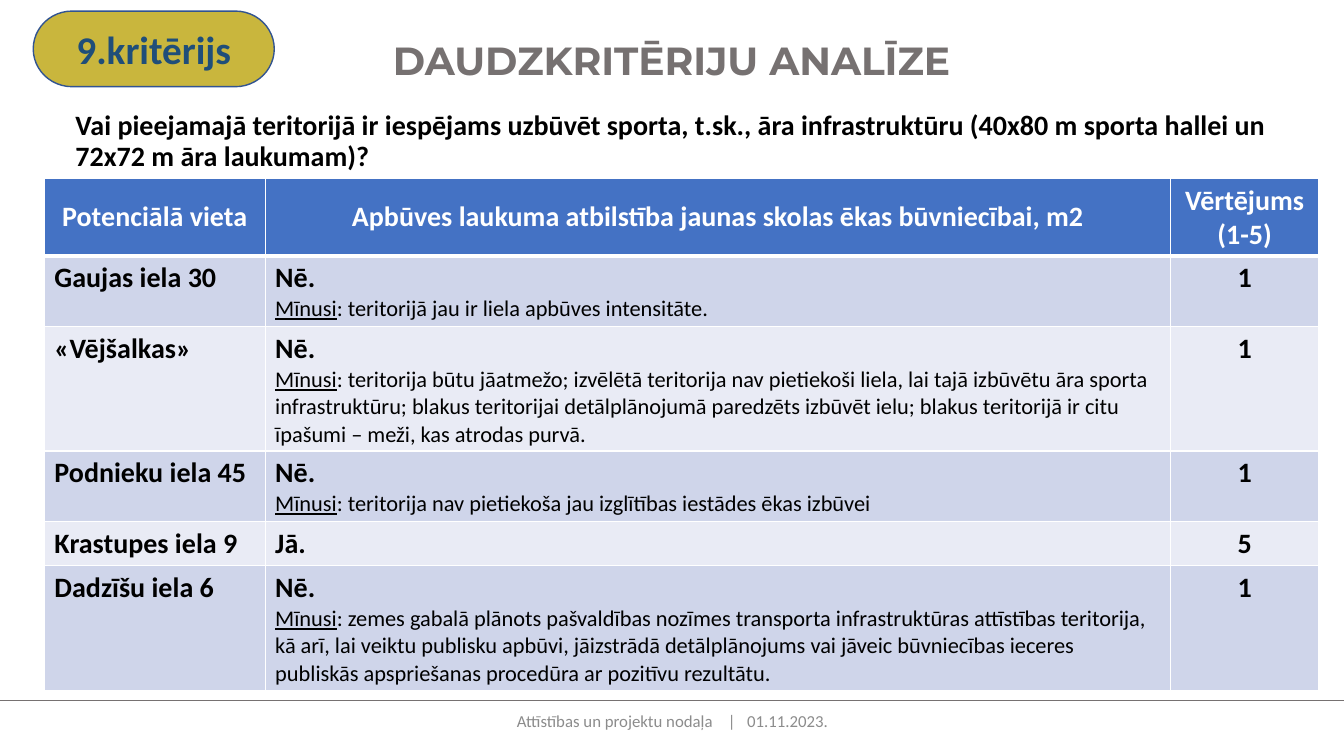
"""Build the slide that scores five sites on criterion 9."""
from dataclasses import dataclass

from lxml import etree
from pptx import Presentation
from pptx import util as u
from pptx.dml import color
from pptx.enum import shapes, text
from pptx.oxml import ns

COLORS = {
    "white": "FFFFFF", "black": "000000", "grey": "767171", "footer": "8C8C8C",
    "header": "4472C4", "band_dark": "CFD5EA", "band_light": "E9EBF5",
    "badge": "C9B63D", "badge_line": "325491", "badge_text": "1F4E79",
}
CENTER = text.PP_ALIGN.CENTER
MIDDLE = text.MSO_ANCHOR.MIDDLE


@dataclass(frozen=True)
class Site:
    """One assessed site; the height is in inches."""
    name: str
    answer: str
    drawback: str
    score: str
    height: float


HEADINGS = ("Potenciālā vieta",
            "Apbūves laukuma atbilstība jaunas skolas ēkas būvniecībai, m2",
            "Vērtējums (1-5)")
COLUMN_WIDTHS = (2.19, 8.98, 1.47)
HEADER_HEIGHT = 0.77
SITES = (
    Site("Gaujas iela 30", "Nē", "teritorijā jau ir liela apbūves intensitāte.", "1", 0.7),
    Site("«Vējšalkas»", "Nē",
         "teritorija būtu jāatmežo; izvēlētā teritorija nav pietiekoši liela, lai tajā "
         "izbūvētu āra sporta infrastruktūru; blakus teritorijai detālplānojumā paredzēts "
         "izbūvēt ielu; blakus teritorijā ir citu īpašumi – meži, kas atrodas purvā.", "1", 1.23),
    Site("Podnieku iela 45", "Nē",
         "teritorija nav pietiekoša jau izglītības iestādes ēkas izbūvei", "1", 0.7),
    Site("Krastupes iela 9", "Jā", "", "5", 0.44),
    Site("Dadzīšu iela 6", "Nē",
         "zemes gabalā plānots pašvaldības nozīmes transporta infrastruktūras attīstības "
         "teritorija, kā arī, lai veiktu publisku apbūvi, jāizstrādā detālplānojums vai "
         "jāveic būvniecības ieceres publiskās apspriešanas procedūra ar pozitīvu rezultātu.",
         "1", 1.23),
)


def rgb(name: str) -> color.RGBColor:
    """Return the named colour."""
    return color.RGBColor.from_string(COLORS[name])


def add_span(para, words: str, *, size: float = 20, ink: str = "black", bold: bool = True,
             underline: bool = False, font: str = "Calibri", spacing: float = 0) -> None:
    """Append formatted text to a paragraph; spacing is in points."""
    span = para.add_run()
    span.text = words
    span.font.size = u.Pt(size)
    span.font.name = font
    span.font.bold = bold
    span.font.underline = underline
    span.font.color.rgb = rgb(ink)
    if spacing:
        span.font._element.set("spc", str(round(spacing * 100)))


def add_text_box(page, left: float, top: float, width: float, height: float):
    """Add a wrapping text box and return its text frame."""
    frame = page.shapes.add_textbox(*map(u.Inches, (left, top, width, height))).text_frame
    frame.word_wrap = True
    return frame


def set_borders(cell, top: float, bottom: float) -> None:
    """Give a cell white borders, with widths in points."""
    properties = cell._tc.get_or_add_tcPr()
    for side, width in (("L", 1), ("R", 1), ("T", top), ("B", bottom)):
        line = etree.SubElement(properties, ns.qn(f"a:ln{side}"), w=str(u.Pt(width)))
        fill = etree.SubElement(line, ns.qn("a:solidFill"))
        etree.SubElement(fill, ns.qn("a:srgbClr"), val=COLORS["white"])


def style_cell(cell, fill: str, top: float = 1, bottom: float = 1) -> None:
    """Set the borders and the fill of a cell."""
    set_borders(cell, top, bottom)
    cell.fill.solid()
    cell.fill.fore_color.rgb = rgb(fill)


def add_site(cells, site: Site) -> None:
    """Write one site into the cells of its row."""
    name, verdict, score = (cell.text_frame for cell in cells)
    add_span(name.paragraphs[0], site.name)
    add_span(verdict.paragraphs[0], f"{site.answer}.")
    if site.drawback:
        para = verdict.add_paragraph()
        add_span(para, "Mīnusi", size=16, bold=False, underline=True)
        add_span(para, f": {site.drawback}", size=16, bold=False)
    score.paragraphs[0].alignment = CENTER
    add_span(score.paragraphs[0], site.score)


def add_score_table(page) -> None:
    """Add the table of sites."""
    heights = (HEADER_HEIGHT, *(site.height for site in SITES))
    table = page.shapes.add_table(
        len(heights), len(HEADINGS), u.Inches(0.44), u.Inches(1.77),
        u.Inches(sum(COLUMN_WIDTHS)), u.Inches(sum(heights))).table
    for column, width in zip(table.columns, COLUMN_WIDTHS):
        column.width = u.Inches(width)
    for row, height in zip(table.rows, heights):
        row.height = u.Inches(height)
    for cell, heading in zip(table.rows[0].cells, HEADINGS):
        style_cell(cell, "header", bottom=3)
        cell.vertical_anchor = MIDDLE
        para = cell.text_frame.paragraphs[0]
        para.alignment = CENTER
        add_span(para, heading, ink="white")
    for index, site in enumerate(SITES):
        cells = list(table.rows[index + 1].cells)
        for cell in cells:
            style_cell(cell, "band_light" if index % 2 else "band_dark",
                       top=1 if index else 3)
        add_site(cells, site)


def add_footer(page) -> None:
    """Add the footer text and the rule above it."""
    frame = add_text_box(page, 4.42, 6.95, 4.5, 0.4)
    frame.vertical_anchor = MIDDLE
    para = frame.paragraphs[0]
    para.alignment = CENTER
    for words, spacing in (("Attīstības un projektu nodaļa", 0), (" ", 8), ("|", 0),
                           (" ", 5.5), ("01.11.2023.", 0)):
        add_span(para, words, size=12, ink="footer", bold=False, spacing=spacing)
    rule = page.shapes.add_connector(shapes.MSO_CONNECTOR.STRAIGHT, u.Inches(0),
                                     u.Inches(6.95), u.Inches(13.33), u.Inches(6.95))
    rule.line.color.rgb = rgb("grey")
    rule.line.width = u.Pt(0.5)
    etree.SubElement(rule._element.spPr, ns.qn("a:effectLst"))


def add_badge(page) -> None:
    """Add the criterion badge."""
    badge = page.shapes.add_shape(shapes.MSO_SHAPE.FLOWCHART_TERMINATOR,
                                  *map(u.Inches, (0.33, 0.11, 2.39, 0.75)))
    badge.shadow.inherit = False
    badge.fill.solid()
    badge.fill.fore_color.rgb = rgb("badge")
    badge.line.color.rgb = rgb("badge_line")
    badge.line.width = u.Pt(1)
    badge.text_frame.vertical_anchor = MIDDLE
    para = badge.text_frame.paragraphs[0]
    para.alignment = CENTER
    add_span(para, "9.kritērijs", size=28, ink="badge_text")


def main() -> None:
    """Build and save the deck."""
    deck = Presentation()
    deck.slide_width, deck.slide_height = u.Inches(13.33), u.Inches(7.5)
    page = deck.slides.add_slide(deck.slide_layouts[6])
    add_footer(page)
    title = add_text_box(page, 0.44, 0.31, 12.44, 0.57).paragraphs[0]
    title.alignment = CENTER
    add_span(title, "DAUDZKRITĒRIJU ANALĪZE", size=28, ink="grey", font="Montserrat")
    question = add_text_box(page, 0.65, 1.06, 12.24, 1.04).paragraphs[0]
    question.line_spacing = 0.9
    question.space_before = u.Pt(10)
    add_span(question, "Vai pieejamajā teritorijā ir iespējams uzbūvēt sporta, t.sk., āra "
                       "infrastruktūru (40x80 m sporta hallei un 72x72 m āra laukumam)?")
    add_score_table(page)
    add_badge(page)
    deck.save("out.pptx")


if __name__ == "__main__":
    main()
